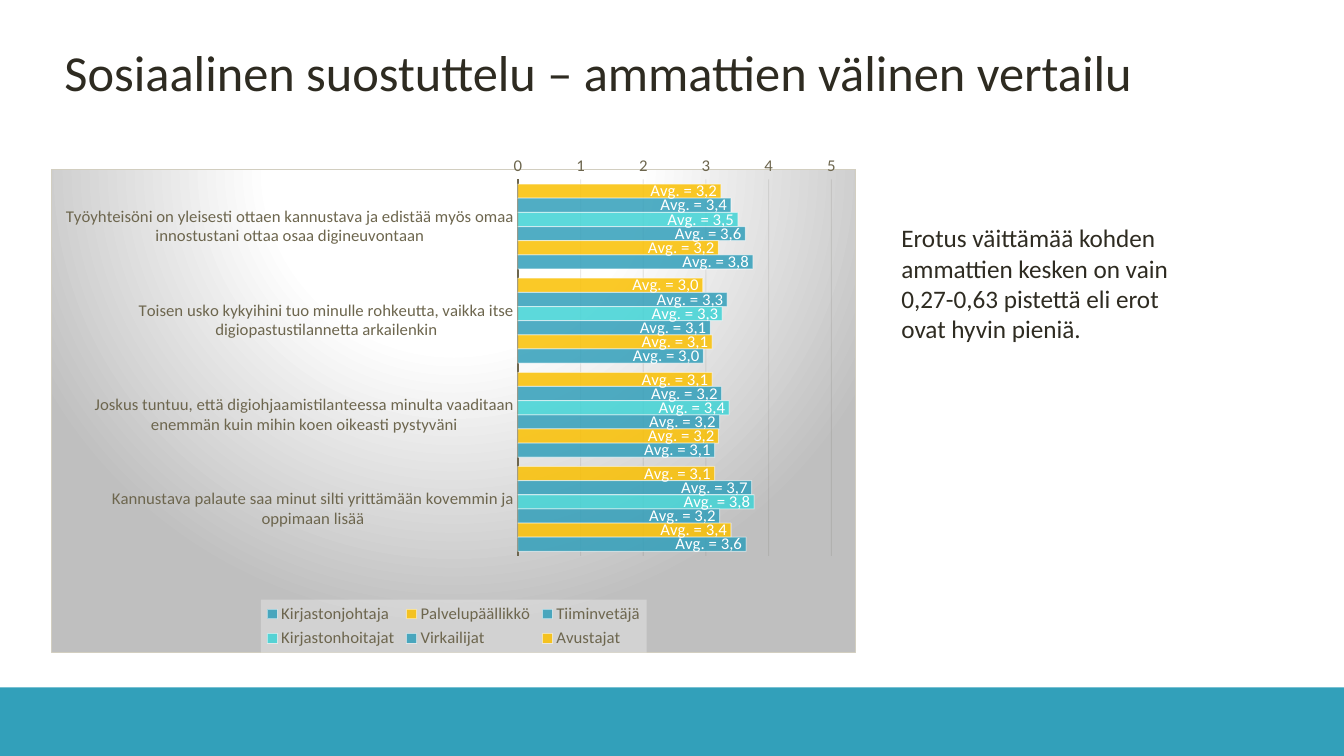
from dataclasses import dataclass

from lxml import etree
from pptx import Presentation
from pptx import util as u
from pptx.chart.data import CategoryChartData
from pptx.dml.color import RGBColor
from pptx.enum import chart as charts, shapes, text
from pptx.oxml import parse_xml
from pptx.oxml.ns import nsdecls, qn


@dataclass(frozen=True)
class Theme:
    font: str = "Calibri"
    ink: str = "2E2B21"
    muted: str = "6D664E"
    grid: str = "3B372A"
    border: str = "D2CEC0"
    white: str = "FFFFFF"
    shade: str = "BFBFBF"
    panel: str = "F2F2F2"
    blue: str = "329FBA"
    band: str = "32A0BA"
    yellow: str = "FAC002"
    turquoise: str = "40D3D5"
    title: int = 36
    body: int = 18
    label: int = 12


THEME = Theme()

STATEMENTS = [
    "Työyhteisöni on yleisesti ottaen kannustava ja edistää myös omaa innostustani ottaa osaa digineuvontaan",
    "Toisen usko kykyihini tuo minulle rohkeutta, vaikka itse digiopastustilannetta arkailenkin",
    "Joskus tuntuu, että digiohjaamistilanteessa minulta vaaditaan enemmän kuin mihin koen oikeasti pystyväni",
    "Kannustava palaute saa minut silti yrittämään kovemmin ja oppimaan lisää",
]
PROFESSIONS = [
    ("Avustajat", THEME.yellow, (3.24, 2.95, 3.10, 3.14)),
    ("Virkailijat", THEME.blue, (3.40, 3.34, 3.25, 3.73)),
    ("Kirjastonhoitajat", THEME.turquoise, (3.51, 3.26, 3.37, 3.77)),
    ("Tiiminvetäjä", THEME.blue, (3.63, 3.07, 3.22, 3.22)),
    ("Palvelupäällikkö", THEME.yellow, (3.20, 3.10, 3.20, 3.40)),
    ("Kirjastonjohtaja", THEME.blue, (3.75, 2.96, 3.14, 3.64)),
]


def rgb(value):
    return RGBColor.from_string(value)


def style_font(font, size, color):
    font.name = THEME.font
    font.size = u.Pt(size)
    font.bold = False
    font.color.rgb = rgb(color)


def style_line(line, color, width):
    line.color.rgb = rgb(color)
    line.width = u.Pt(width)


def set_alpha(element, query, percent):
    for color in element.xpath(query):
        etree.SubElement(color, qn("a:alpha")).set("val", str(percent * 1000))


def add_band(slide, left, top, width, height):
    band = slide.shapes.add_shape(
        shapes.MSO_SHAPE.RECTANGLE, *map(u.Inches, (left, top, width, height)))
    band.shadow.inherit = False
    band.fill.solid()
    band.fill.fore_color.rgb = rgb(THEME.band)
    band.line.fill.background()


def add_text(slide, left, top, width, height, words, size, anchor, fill=None):
    box = slide.shapes.add_textbox(*map(u.Inches, (left, top, width, height)))
    if fill:
        box.fill.solid()
        box.fill.fore_color.rgb = rgb(fill)
    frame = box.text_frame
    frame.word_wrap = True
    frame.auto_size = text.MSO_AUTO_SIZE.SHAPE_TO_FIT_TEXT
    frame.vertical_anchor = anchor
    frame.margin_left = frame.margin_right = u.Inches(0.13)
    frame.margin_top = frame.margin_bottom = u.Inches(0.07)
    frame.text = words
    style_font(frame.paragraphs[0].runs[0].font, size, THEME.ink)


def make_layout(left, top, width, height, inner=False):
    target = '<c:layoutTarget val="inner"/>' if inner else ""
    return parse_xml(
        f'<c:layout {nsdecls("c")}><c:manualLayout>{target}'
        '<c:xMode val="edge"/><c:yMode val="edge"/>'
        f'<c:x val="{left}"/><c:y val="{top}"/><c:w val="{width}"/><c:h val="{height}"/>'
        '</c:manualLayout></c:layout>')


def style_background(chart):
    stops = ((0, THEME.white), (39, THEME.white), (100, THEME.shade))
    gradient = "".join(
        f'<a:gs pos="{place * 1000}"><a:srgbClr val="{color}"/></a:gs>' for place, color in stops)
    properties = parse_xml(
        f'<c:spPr {nsdecls("c", "a")}><a:gradFill><a:gsLst>{gradient}</a:gsLst>'
        '<a:path path="circle"><a:fillToRect l="50000" t="-80000" r="50000" b="180000"/></a:path>'
        f'</a:gradFill><a:ln w="{u.Pt(0.75)}"><a:solidFill><a:srgbClr val="{THEME.border}"/>'
        '</a:solidFill></a:ln></c:spPr>')
    chart._chartSpace.find(qn("c:txPr")).addprevious(properties)


def style_axes(chart):
    statements, scores = chart.category_axis, chart.value_axis
    for axis in (statements, scores):
        style_font(axis.tick_labels.font, THEME.label, THEME.muted)
        axis.major_tick_mark = axis.minor_tick_mark = charts.XL_TICK_MARK.NONE
    statements.reverse_order = True
    statements.crosses = charts.XL_AXIS_CROSSES.MAXIMUM
    style_line(statements.format.line, THEME.muted, 1.5)
    scores.minimum_scale, scores.maximum_scale, scores.major_unit = 0, 5, 1
    scores.tick_labels.number_format = "General"
    scores.tick_labels.number_format_is_linked = False
    scores.format.line.fill.background()
    style_line(scores.major_gridlines.format.line, THEME.grid, 0.75)
    set_alpha(scores._element, "c:majorGridlines//a:srgbClr", 10)


def style_series(series, color, values):
    series.format.fill.solid()
    series.format.fill.fore_color.rgb = rgb(color)
    style_line(series.format.line, THEME.white, 0.75)
    set_alpha(series._element, "c:spPr/a:solidFill/a:srgbClr", 85)
    set_alpha(series._element, "c:spPr/a:ln//a:srgbClr", 50)
    labels = series.data_labels
    labels.show_value = True
    labels.position = charts.XL_LABEL_POSITION.INSIDE_END
    style_font(labels.font, THEME.label, THEME.white)
    for index, value in enumerate(values):
        label = series.points[index].data_label
        label.text_frame.text = f"Avg. = {value:.1f}".replace(".", ",").replace("Avg,", "Avg.")
        style_font(label.text_frame.paragraphs[0].runs[0].font, THEME.label, THEME.white)
        label.position = charts.XL_LABEL_POSITION.INSIDE_END


def style_legend(chart):
    chart.has_legend = True
    legend = chart.legend
    legend.position = charts.XL_LEGEND_POSITION.BOTTOM
    legend.include_in_layout = False
    style_font(legend.font, THEME.label, THEME.muted)
    element = legend._element
    for layout in element.findall(qn("c:layout")):
        element.remove(layout)
    element.find(qn("c:legendPos")).addnext(make_layout(0.26, 0.89, 0.48, 0.11))
    element.find(qn("c:txPr")).addprevious(parse_xml(
        f'<c:spPr {nsdecls("c", "a")}><a:solidFill><a:srgbClr val="{THEME.panel}">'
        '<a:alpha val="39000"/></a:srgbClr></a:solidFill></c:spPr>'))


def add_profession_chart(slide, left, top, width, height):
    data = CategoryChartData()
    data.categories = STATEMENTS
    for name, _, values in PROFESSIONS:
        data.add_series(name, values)
    chart = slide.shapes.add_chart(
        charts.XL_CHART_TYPE.BAR_CLUSTERED,
        *map(u.Inches, (left, top, width, height)), data).chart
    chart.has_title = False
    style_font(chart.font, 10, THEME.ink)
    style_background(chart)
    style_axes(chart)
    plot = chart.plots[0]
    plot.gap_width = 65
    plot.overlap = 0
    plot.vary_by_categories = False
    for series, (_, color, values) in zip(plot.series, PROFESSIONS):
        style_series(series, color, values)
    style_legend(chart)
    area = chart._chartSpace.chart.plotArea
    for layout in area.findall(qn("c:layout")):
        area.remove(layout)
    area.insert(0, make_layout(0.58, 0.02, 0.39, 0.78, inner=True))


def main():
    deck = Presentation()
    deck.slide_width, deck.slide_height = u.Inches(13.33), u.Inches(7.5)
    slide = deck.slides.add_slide(deck.slide_layouts[6])
    add_band(slide, 0, 6.82, 13.33, 0.68)
    add_text(slide, 0.51, 0.34, 11.67, 0.74,
             "Sosiaalinen suostuttelu – ammattien välinen vertailu",
             THEME.title, text.MSO_ANCHOR.MIDDLE)
    add_profession_chart(slide, 0.51, 1.55, 7.98, 4.93)
    add_text(slide, 8.81, 2.14, 3.24, 1.35,
             "Erotus väittämää kohden ammattien kesken on vain 0,27-0,63 pistettä "
             "eli erot ovat hyvin pieniä.",
             THEME.body, text.MSO_ANCHOR.TOP, THEME.white)
    deck.save("out.pptx")


if __name__ == "__main__":
    main()
